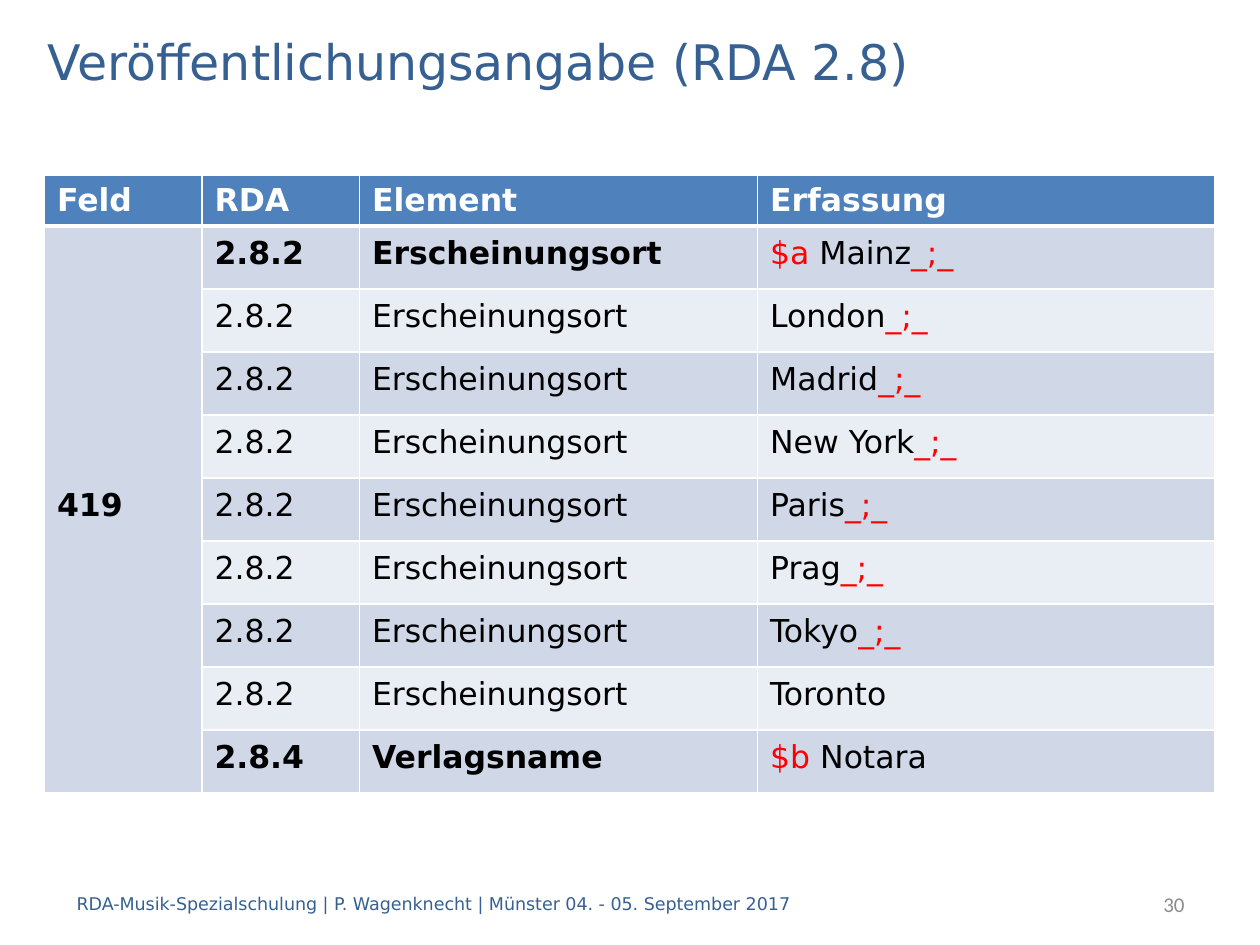
from lxml.etree import SubElement
from pptx import Presentation
from pptx.dml.color import RGBColor
from pptx.enum.text import MSO_ANCHOR, PP_ALIGN
from pptx.oxml.ns import qn
from pptx.util import Pt

COLORS = {
    "title": "376092", "number": "8C8C8C", "header": "4F81BD",
    "odd": "D0D8E8", "even": "E9EDF4", "white": "FFFFFF",
    "black": "000000", "red": "FF0000",
}
FONT = "DejaVu Sans"
SEPARATOR = ("_;_", "red")
HEADERS = ["Feld", "RDA", "Element", "Erfassung"]
WIDTHS = [90, 90, 227.5, 261.4]
HEADER_HEIGHT, ROW_HEIGHT = 19.4, 36
CITIES = ["London", "Madrid", "New York", "Paris", "Prag", "Tokyo"]
PLACE = ("2.8.2", "Erscheinungsort")
ROWS = [
    (*PLACE, True, [("$a ", "red"), ("Mainz", "black"), SEPARATOR]),
    *[(*PLACE, False, [(city, "black"), SEPARATOR]) for city in CITIES],
    (*PLACE, False, [("Toronto", "black")]),
    ("2.8.4", "Verlagsname", True, [("$b ", "red"), ("Notara", "black")]),
]
ROW_FORMAT = {"line_spacing": Pt(16), "space_before": Pt(6), "space_after": Pt(6)}


def rgb(name):
    return RGBColor.from_string(COLORS[name])


def apply(obj, values):
    for name, value in values.items():
        setattr(obj, name, value)


def add_runs(p, runs, size, bold=False, font=FONT):
    for text, color in runs:
        r = p.add_run()
        r.text = text
        apply(r.font, {"name": font, "size": Pt(size), "bold": bold})
        r.font.color.rgb = rgb(color)


def add_text(s, box, text, size, color, font=FONT, align=PP_ALIGN.LEFT):
    tf = s.shapes.add_textbox(*map(Pt, box)).text_frame
    apply(tf, {"word_wrap": True, "vertical_anchor": MSO_ANCHOR.MIDDLE})
    p = tf.paragraphs[0]
    p.alignment = align
    add_runs(p, [(text, color)], size, font=font)


def style_cell(cell, fill, top=1, bottom=1):
    tcPr = cell._tc.get_or_add_tcPr()
    for side, width in {"L": 1, "R": 1, "T": top, "B": bottom}.items():
        ln = SubElement(tcPr, qn(f"a:ln{side}"), w=str(Pt(width)))
        SubElement(SubElement(ln, qn("a:solidFill")), qn("a:srgbClr"), val=COLORS["white"])
    cell.fill.solid()
    cell.fill.fore_color.rgb = rgb(fill)


def fill_cell(cell, runs, bold):
    cell.vertical_anchor = MSO_ANCHOR.MIDDLE
    p = cell.text_frame.paragraphs[0]
    apply(p, ROW_FORMAT)
    add_runs(p, runs, 18, bold)


def add_entry_table(s, left, top):
    height = HEADER_HEIGHT + ROW_HEIGHT * len(ROWS)
    table = s.shapes.add_table(len(ROWS) + 1, len(WIDTHS), Pt(left), Pt(top),
                               Pt(sum(WIDTHS)), Pt(height)).table
    for column, width in zip(table.columns, WIDTHS):
        column.width = Pt(width)
    for i, row in enumerate(table.rows):
        row.height = Pt(ROW_HEIGHT if i else HEADER_HEIGHT)
    for c, header in enumerate(HEADERS):
        cell = table.cell(0, c)
        style_cell(cell, "header", bottom=3)
        add_runs(cell.text_frame.paragraphs[0], [(header, "white")], 18, True)
    for i, (rule, element, bold, entry) in enumerate(ROWS, 1):
        band = "odd" if i % 2 else "even"
        for c in range(len(WIDTHS)):
            style_cell(table.cell(i, c), band if c else "odd", top=3 if i == 1 else 1)
        fill_cell(table.cell(i, 1), [(rule, "black")], bold)
        fill_cell(table.cell(i, 2), [(element, "black")], bold)
        fill_cell(table.cell(i, 3), entry, False)
    field = table.cell(1, 0)
    field.merge(table.cell(len(ROWS), 0))
    fill_cell(field, [("419", "black")], True)


def main():
    prs = Presentation()
    apply(prs, {"slide_width": Pt(720), "slide_height": Pt(540)})
    s = prs.slides.add_slide(prs.slide_layouts[6])
    add_text(s, (20, 14.5, 680, 40), "Veröffentlichungsangabe (RDA 2.8)", 28, "title")
    add_text(s, (36.7, 502, 601, 28.8),
             "RDA-Musik-Spezialschulung | P. Wagenknecht | Münster 04. - 05. September 2017",
             10, "title")
    add_text(s, (569.5, 502, 114.5, 28.8), "30", 12, "number", "Calibri", PP_ALIGN.RIGHT)
    add_entry_table(s, 25.4, 100.4)
    prs.save("out.pptx")


if __name__ == "__main__":
    main()
